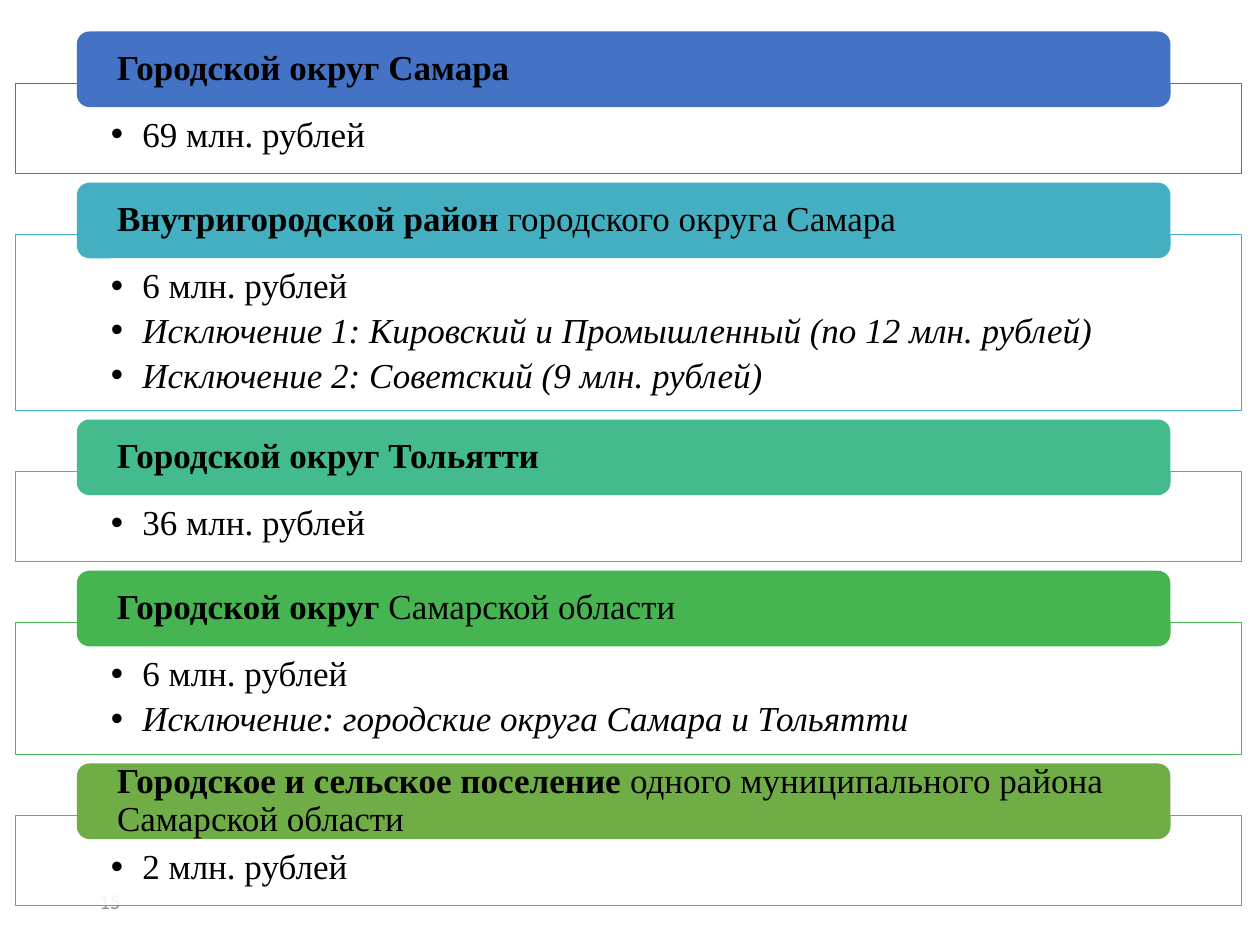
from dataclasses import dataclass

from lxml.etree import SubElement
from pptx import Presentation
from pptx.dml.color import RGBColor
from pptx.enum.shapes import MSO_SHAPE
from pptx.enum.text import MSO_ANCHOR, PP_ALIGN
from pptx.oxml.ns import qn
from pptx.util import Inches, Pt

# Content: bar colour, heading (bold, regular), amount, exceptions
SECTIONS = [
    ("4472C4", ("Городской округ Самара", ""), "69 млн. рублей", []),
    ("43AFC0", ("Внутригородской район ", "городского округа Самара"), "6 млн. рублей",
     ["Исключение 1: Кировский и Промышленный (по 12 млн. рублей)",
      "Исключение 2: Советский (9 млн. рублей)"]),
    ("43BB8D", ("Городской округ Тольятти", ""), "36 млн. рублей", []),
    ("45B451", ("Городской округ", " Самарской области"), "6 млн. рублей",
     ["Исключение: городские округа Самара и Тольятти"]),
    ("70AD47", ("Городское и сельское поселение ", "одного муниципального района Самарской области"),
     "2 млн. рублей", []),
]
PAGE_NUMBER = "15"


@dataclass(frozen=True)
class Theme:
    font: str = "Times New Roman"
    number_font: str = "Calibri"
    text: str = "000000"
    panel: str = "FFFFFF"
    muted: str = "8C8C8C"
    size: int = 20
    number_size: int = 12
    panel_opacity: int = 90


THEME = Theme()

# Layout in inches: each bar overlaps the top of its panel
TOP, GAP = 0.25, 0.07
PANEL_LEFT, PANEL_WIDTH = 0.12, 9.73
BAR_LEFT, BAR_WIDTH, BAR_HEIGHT = 0.61, 8.68, 0.6
PANEL_OFFSET = 0.41
PANEL_HEIGHTS = {1: 0.72, 2: 1.05, 3: 1.4}  # by number of lines


def style(font, name, size, color, bold=False, italic=False):
    font.name, font.size, font.bold, font.italic = name, Pt(size), bold, italic
    font.color.rgb = RGBColor.from_string(color)


def set_frame(frame, anchor, left, top, right, bottom):
    frame.word_wrap = True
    frame.vertical_anchor = anchor
    frame.margin_left, frame.margin_top = Inches(left), Inches(top)
    frame.margin_right, frame.margin_bottom = Inches(right), Inches(bottom)


def add_block(slide, preset, fill, *place):
    block = slide.shapes.add_shape(preset, *map(Inches, place))
    block.shadow.inherit = False
    block.fill.solid()
    block.fill.fore_color.rgb = RGBColor.from_string(fill)
    return block


def add_bullet(paragraph):
    properties = paragraph._p.get_or_add_pPr()
    properties.set("marL", str(Inches(0.25)))
    properties.set("indent", str(-Inches(0.25)))
    SubElement(properties, qn("a:buFont"), typeface="Arial")
    SubElement(properties, qn("a:buChar"), char="•")


def add_panel(slide, top, color, amount, exceptions):
    lines = [amount, *exceptions]
    height = PANEL_HEIGHTS[len(lines)]
    panel = add_block(slide, MSO_SHAPE.RECTANGLE, THEME.panel, PANEL_LEFT, top, PANEL_WIDTH, height)
    white = panel.fill._xPr.find(qn("a:solidFill"))[0]
    SubElement(white, qn("a:alpha"), val=str(THEME.panel_opacity * 1000))
    panel.line.color.rgb = RGBColor.from_string(color)
    panel.line.width = Pt(0.5)

    frame = panel.text_frame
    set_frame(frame, MSO_ANCHOR.TOP, 0.76, 0.27, 0.76, 0.16)
    frame.text = "\n".join(lines)
    for index, paragraph in enumerate(frame.paragraphs):
        paragraph.alignment = PP_ALIGN.LEFT
        paragraph.line_spacing = 0.9
        paragraph.space_after = Pt(4)
        add_bullet(paragraph)
        for run in paragraph.runs:
            style(run.font, THEME.font, THEME.size, THEME.text, italic=index > 0)
    return height


def add_bar(slide, top, color, heading):
    bar = add_block(slide, MSO_SHAPE.ROUNDED_RECTANGLE, color, BAR_LEFT, top, BAR_WIDTH, BAR_HEIGHT)
    bar.line.fill.background()
    set_frame(bar.text_frame, MSO_ANCHOR.MIDDLE, 0.29, 0, 0.29, 0)
    paragraph = bar.text_frame.paragraphs[0]
    paragraph.alignment = PP_ALIGN.LEFT
    paragraph.line_spacing = 0.9
    for part, bold in zip(heading, (True, False)):
        if part:
            run = paragraph.add_run()
            run.text = part
            style(run.font, THEME.font, THEME.size, THEME.text, bold=bold)


def add_page_number(slide):
    number = slide.shapes.add_textbox(*map(Inches, (0.69, 6.95, 2.25, 0.4)))
    set_frame(number.text_frame, MSO_ANCHOR.MIDDLE, 0.1, 0.05, 0.1, 0.05)
    number.text_frame.text = PAGE_NUMBER
    style(number.text_frame.paragraphs[0].runs[0].font,
          THEME.number_font, THEME.number_size, THEME.muted)


def main():
    deck = Presentation()
    deck.slide_width, deck.slide_height = Inches(10), Inches(7.5)
    slide = deck.slides.add_slide(deck.slide_layouts[6])

    # The number lies behind the last panel
    add_page_number(slide)

    # Sections stacked from the top
    top = TOP
    for color, heading, amount, exceptions in SECTIONS:
        height = add_panel(slide, top + PANEL_OFFSET, color, amount, exceptions)
        add_bar(slide, top, color, heading)
        top += PANEL_OFFSET + height + GAP

    deck.save("out.pptx")


if __name__ == "__main__":
    main()
